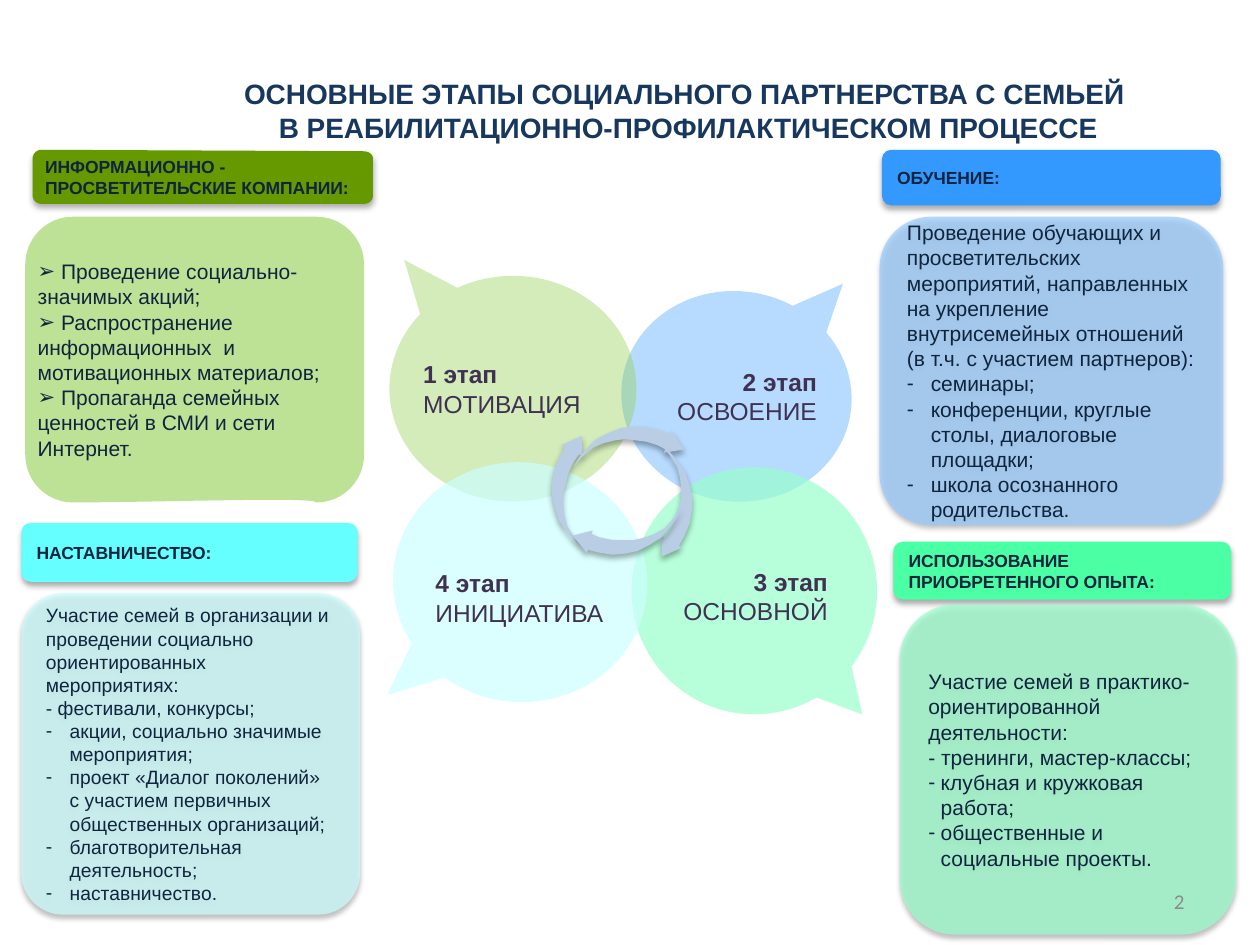
from dataclasses import dataclass

import pptx
import pptx.dml.color
import pptx.enum.shapes
import pptx.enum.text
import pptx.oxml
import pptx.oxml.ns
import pptx.util
from lxml import etree

Cm = pptx.util.Cm
Pt = pptx.util.Pt
Shape = pptx.enum.shapes.MSO_SHAPE
Align = pptx.enum.text.PP_ALIGN
Anchor = pptx.enum.text.MSO_ANCHOR
qn = pptx.oxml.ns.qn


@dataclass(frozen=True)
class Theme:
    font: str = "Arial"
    number_font: str = "Calibri"
    title: str = "17375E"
    ink: str = "0F243E"
    stage_ink: str = "403152"
    muted: str = "8C8C8C"
    green: str = "92D050"
    olive: str = "669900"
    sky: str = "99CCFF"
    blue: str = "3399FF"
    mint: str = "99FFCC"
    emerald: str = "4BFFA5"
    ice: str = "CCFFFF"
    cyan: str = "66FFFF"
    arrow: str = "B9CDE5"
    title_size: int = 16
    stage_size: int = 14
    body_size: int = 12
    dense_size: int = 11
    header_size: int = 10


HEADER_SHADOW = (3.5, 2.2, 32)
PANEL_SHADOW = (3.1, 1.8, 35)


def bezier(start, controls, steps=12):
    points = [start, *controls]
    weights = (1, 3, 3, 1)
    for step in range(1, steps + 1):
        t = step / steps
        blend = [w * t**k * (1 - t) ** (3 - k) for k, w in enumerate(weights)]
        yield tuple(sum(b * p[axis] for b, p in zip(blend, points)) for axis in (0, 1))


def trace(start, *segments):
    outline = [start]
    for segment in segments:
        outline += bezier(outline[-1], segment) if len(segment) == 3 else segment
    return outline


class SlideBuilder:
    def __init__(self, theme, slide):
        self.theme = theme
        self.slide = slide

    def paint(self, shape, color, opacity=100, shadow=None):
        shape.fill.solid()
        shape.fill.fore_color.rgb = pptx.dml.color.RGBColor.from_string(color)
        shape.line.fill.background()
        shape.shadow.inherit = False
        properties = shape._element.spPr
        if opacity < 100:
            tint = properties.find(qn("a:solidFill"))[0]
            etree.SubElement(tint, qn("a:alpha"), val=str(opacity * 1000))
        if shadow:
            blur, distance, strength = shadow
            outer = etree.SubElement(
                properties.find(qn("a:effectLst")), qn("a:outerShdw"),
                blurRad=str(Pt(blur)), dist=str(Pt(distance)), dir="5400000", rotWithShape="0")
            black = etree.SubElement(outer, qn("a:srgbClr"), val="000000")
            etree.SubElement(black, qn("a:alpha"), val=str(strength * 1000))

    def fill_text(self, shape, lines, size, color=None, bold=False, align=Align.LEFT,
                  anchor=Anchor.MIDDLE, font=None):
        frame = shape.text_frame
        frame.word_wrap = True
        frame.auto_size = pptx.enum.text.MSO_AUTO_SIZE.NONE
        frame.vertical_anchor = anchor
        frame.margin_left = frame.margin_right = Cm(0.25)
        frame.margin_top = frame.margin_bottom = Cm(0.13)
        for index, line in enumerate(lines):
            bullet, indent, wording = line if isinstance(line, tuple) else (None, 0, line)
            paragraph = frame.paragraphs[0] if index == 0 else frame.add_paragraph()
            paragraph.text = wording
            paragraph.alignment = align
            if bullet:
                layout = paragraph._p.get_or_add_pPr()
                layout.set("marL", str(Cm(indent)))
                layout.set("indent", str(-Cm(indent)))
                etree.SubElement(layout, qn("a:buFont"), typeface=self.theme.font)
                etree.SubElement(layout, qn("a:buChar"), char=bullet)
            paragraph.font.name = font or self.theme.font
            paragraph.font.size = Pt(size)
            paragraph.font.bold = bold if isinstance(bold, bool) else index in bold
            paragraph.font.color.rgb = pptx.dml.color.RGBColor.from_string(color or self.theme.ink)

    def preset(self, kind, box, adjustments):
        shape = self.slide.shapes.add_shape(kind, *map(Cm, box))
        for index, value in enumerate(adjustments):
            shape.adjustments[index] = value
        return shape

    def outline(self, points):
        scaled = [(Cm(x), Cm(y)) for x, y in points]
        builder = self.slide.shapes.build_freeform(*scaled[0])
        builder.add_line_segments(scaled[1:], close=True)
        return builder.convert_to_shape()

    def title(self, box, lines):
        heading = self.slide.shapes.title
        heading.left, heading.top, heading.width, heading.height = map(Cm, box)
        self.fill_text(heading, lines, self.theme.title_size, self.theme.title, True,
                       Align.CENTER, Anchor.TOP)

    def text(self, box, lines, size, color, **style):
        self.fill_text(self.slide.shapes.add_textbox(*map(Cm, box)), lines, size, color, **style)

    def callout(self, box, rotation, tail, color, opacity):
        bubble = self.preset(Shape.OVAL_CALLOUT, box, tail)
        bubble.rotation = rotation
        self.paint(bubble, color, opacity)

    def arrow(self, left, top, rotation, points):
        shape = self.outline(points)
        shape.left, shape.top, shape.rotation = Cm(left), Cm(top), rotation
        self.paint(shape, self.theme.arrow, shadow=HEADER_SHADOW)

    def header(self, shape, color, wording):
        self.paint(shape, color, shadow=HEADER_SHADOW)
        self.fill_text(shape, [wording], self.theme.header_size, bold=True)

    def panel(self, shape, color, opacity, lines, size, shadow=PANEL_SHADOW):
        self.paint(shape, color, opacity, shadow)
        self.fill_text(shape, lines, size)

    def rounded(self, box, radius=0.167):
        return self.preset(Shape.ROUNDED_RECTANGLE, box, [radius])


def main():
    theme = Theme()
    deck = pptx.Presentation()
    deck.slide_width, deck.slide_height = Cm(25.4), Cm(19.05)
    page = SlideBuilder(theme, deck.slides.add_slide(deck.slide_layouts[5]))

    page.title((3.4, 1.42, 20.8, 1.63), [
        "ОСНОВНЫЕ ЭТАПЫ СОЦИАЛЬНОГО ПАРТНЕРСТВА С СЕМЬЕЙ",
        " В РЕАБИЛИТАЦИОННО-ПРОФИЛАКТИЧЕСКОМ ПРОЦЕССЕ"])

    for box, rotation, tail, color, opacity in (
            ((12.52, 5.87, 4.65, 4.24), 187.9, (-0.39, 0.6), theme.sky, 70),
            ((7.85, 5.56, 4.98, 4.55), 180, (0.44, 0.57), theme.green, 40),
            ((12.73, 9.42, 4.95, 4.98), 180, (-0.44, -0.5), theme.mint, 70),
            ((7.92, 9.32, 5.13, 4.83), 187.5, (0.46, -0.54), theme.ice, 70)):
        page.callout(box, rotation, tail, color, opacity)

    for left, top, width, align, stage, name in (
            (8.28, 7.11, 4.19, Align.LEFT, "1 этап", "МОТИВАЦИЯ"),
            (12.45, 7.26, 4.27, Align.RIGHT, "2 этап", "ОСВОЕНИЕ"),
            (13.4, 11.3, 3.54, Align.RIGHT, "3 этап", "ОСНОВНОЙ"),
            (8.53, 11.33, 4.39, Align.LEFT, "4 этап", "ИНИЦИАТИВА")):
        page.text((left, top, width, 1.45), [stage, name], theme.stage_size, theme.stage_ink,
                  bold=(0,), align=align, anchor=Anchor.TOP)

    cycle_arrow = [
        (1.87, 0.5), (1.84, 0.57), (2.25, 0.53), (2.03, 0.13), (2, 0.2), (1.8, 0.11),
        (1.53, 0.02), (1.27, 0), (1.02, 0.01), (0.76, 0.09), (0.5, 0.2), (0.28, 0.39),
        (0.14, 0.53), (0, 0.73), (0.19, 0.54), (0.41, 0.37), (0.64, 0.29), (0.87, 0.25),
        (1.08, 0.24), (1.3, 0.28), (1.5, 0.32), (1.73, 0.41)]
    for left, top, rotation in ((10.36, 9.53, 274.3), (11.53, 8.61, 356),
                                (12.47, 9.75, 94.7), (11.56, 10.41, 170.5)):
        page.arrow(left, top, rotation, cycle_arrow)

    campaign_header = trace(
        (0.66, 3.2), [(0.66, 3.1), (0.74, 3.02), (0.84, 3.02)], [(7.32, 3.05)],
        [(7.42, 3.05), (7.52, 3.1), (7.52, 3.2)], [(7.52, 3.94)],
        [(7.52, 4.04), (7.44, 4.11), (7.34, 4.11)], [(0.84, 4.11)],
        [(0.74, 4.11), (0.66, 4.04), (0.66, 3.94)])
    campaign_panel = trace(
        (0.51, 5.33), [(0.51, 4.8), (0.94, 4.37), (1.47, 4.37)], [(6.38, 4.37)],
        [(6.91, 4.37), (7.34, 4.8), (7.34, 5.33)], [(7.34, 9.17)],
        [(7.34, 9.7), (6.91, 10.13), (6.38, 10.13)],
        [(6.43, 10.01), (3.1, 10.13), (1.47, 10.13)],
        [(0.94, 10.13), (0.51, 9.7), (0.51, 9.17)])
    page.header(page.outline(campaign_header), theme.olive,
                "ИНФОРМАЦИОННО - ПРОСВЕТИТЕЛЬСКИЕ КОМПАНИИ:")
    page.panel(page.outline(campaign_panel), theme.green, 60, [
        ("➢", 0, " Проведение социально-значимых акций;"),
        ("➢", 0, " Распространение информационных  и мотивационных материалов;"),
        ("➢", 0, " Пропаганда семейных ценностей в СМИ и сети Интернет.")],
        theme.body_size, shadow=None)

    page.header(page.rounded((17.78, 3.02, 6.83, 1.12)), theme.blue, "ОБУЧЕНИЕ:")
    page.panel(page.rounded((17.73, 4.37, 6.93, 6.22)), theme.sky, 70, [
        "Проведение обучающих и просветительских мероприятий, направленных на укрепление "
        "внутрисемейных отношений (в т.ч. с участием партнеров):",
        ("-", 0.48, "семинары;"),
        ("-", 0.48, "конференции, круглые столы, диалоговые площадки;"),
        ("-", 0.48, "школа осознанного родительства.")], theme.body_size)

    page.header(page.rounded((18.01, 10.92, 6.81, 1.17)), theme.emerald,
                "ИСПОЛЬЗОВАНИЕ ПРИОБРЕТЕННОГО ОПЫТА:")
    page.panel(page.rounded((18.14, 12.19, 6.78, 6.65)), theme.mint, 70, [
        "Участие семей в практико-ориентированной деятельности:",
        "- тренинги, мастер-классы;",
        ("-", 0.25, "клубная и кружковая работа;"),
        ("-", 0.25, "общественные и социальные проекты.")], theme.body_size)

    page.panel(page.rounded((0.43, 11.96, 6.83, 6.48), 0.13), theme.ice, 70, [
        "Участие семей в организации и проведении социально ориентированных мероприятиях:",
        "- фестивали, конкурсы;",
        ("-", 0.48, "акции, социально значимые мероприятия;"),
        ("-", 0.48, "проект «Диалог поколений» с участием первичных общественных организаций;"),
        ("-", 0.48, "благотворительная деятельность;"),
        ("-", 0.48, "наставничество.")], theme.dense_size)
    page.header(page.rounded((0.43, 10.54, 6.78, 1.19)), theme.cyan, "НАСТАВНИЧЕСТВО:")

    page.text((18.21, 17.65, 5.92, 1.02), ["2"], theme.body_size, theme.muted,
              align=Align.RIGHT, font=theme.number_font)
    deck.save("out.pptx")


if __name__ == "__main__":
    main()
